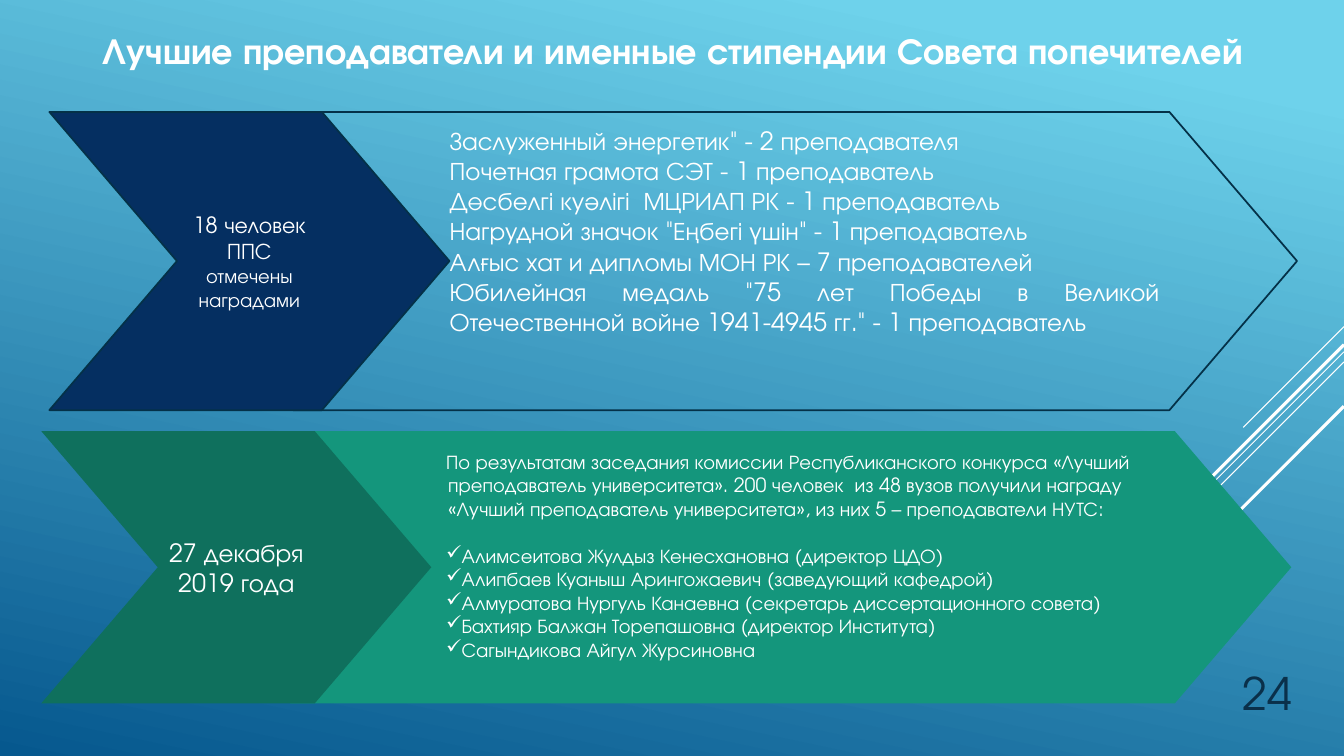
"""Build the slide on the best teachers and the named scholarships."""
from dataclasses import dataclass

from lxml.etree import SubElement
from pptx import Presentation
from pptx.dml.color import RGBColor
from pptx.enum.shapes import MSO_CONNECTOR, MSO_SHAPE
from pptx.enum.text import MSO_ANCHOR, MSO_AUTO_SIZE, PP_ALIGN
from pptx.oxml.ns import qn
from pptx.util import Pt

FONT = "TeX Gyre Adventor"
WHITE = "FFFFFF"
WIDTH, HEIGHT = 960, 540
POINT_DEPTH = 0.428
INSET = 3.6


@dataclass(frozen=True)
class Phrase:
    text: str
    size: float
    color: str = WHITE
    bold: bool = False


@dataclass(frozen=True)
class Line:
    phrases: tuple[Phrase, ...]
    align: PP_ALIGN = PP_ALIGN.CENTER
    margin: float = 0
    indent: float = 0
    bullet: str = ""
    before: float = 0


@dataclass(frozen=True)
class Chevron:
    left: float
    top: float
    width: float
    height: float
    lines: tuple[Line, ...]
    fill: str = ""
    outline: str = ""
    space_below: float = 0


@dataclass(frozen=True)
class Ray:
    top: float
    reach: float
    weight: float


AWARDS = (
    'Заслуженный энергетик" - 2 преподавателя',
    "Почетная грамота СЭТ - 1 преподаватель",
    "Дөсбелгі куәлігі  МЦРИАП РК - 1 преподаватель",
    'Нагрудной значок "Еңбегі үшін" - 1 преподаватель',
    "Алғыс хат и дипломы МОН РК – 7 преподавателей",
    'Юбилейная медаль "75 лет Победы в Великой Отечественной войне '
    '1941-4945 гг." - 1 преподаватель',
)
CONTEST = (
    "По результатам заседания комиссии Республиканского конкурса «Лучший "
    "преподаватель университета». 200 человек  из 48 вузов получили награду "
    "«Лучший преподаватель университета», из них 5 – преподаватели НУТС:"
)
WINNERS = (
    "Алимсеитова Жулдыз Кенесхановна (директор ЦДО)",
    "Алипбаев Куаныш Арингожаевич (заведующий кафедрой)",
    "Алмуратова Нургуль Канаевна (секретарь диссертационного совета)",
    "Бахтияр Балжан Торепашовна (директор Института)",
    "Сагындикова Айгул Журсиновна",
)
AWARD_LINES = tuple(
    Line((Phrase(award, 18),), PP_ALIGN.JUSTIFY, margin=13.5) for award in AWARDS
)
CONTEST_LINES = (
    Line((Phrase(CONTEST, 14),), PP_ALIGN.LEFT, margin=22.5, indent=-1.5),
    *(
        Line((Phrase(winner, 14),), PP_ALIGN.LEFT, 22.5, -1.5, "✓", 0 if place else 16.9)
        for place, winner in enumerate(WINNERS)
    ),
)
AWARDED = Line((Phrase("18 человек ППС ", 16), Phrase("отмечены наградами", 14)))
CONTEST_DATE = Line((Phrase("27 декабря 2019 года", 18),))

CHEVRONS = (
    Chevron(209.5, 80, 717, 213, AWARD_LINES, outline="043148", space_below=43.2),
    Chevron(35.3, 80, 285.8, 213, (AWARDED,), "052F61", "043148"),
    Chevron(207.4, 308, 715, 194.4, CONTEST_LINES, "14967C", space_below=16.9),
    Chevron(29.5, 308, 278.6, 194.4, (CONTEST_DATE,), "0F705D"),
)
RAYS = (
    Ray(233.3, 72, 0.75),
    Ray(251.3, 234.7, 0.75),
    Ray(258.5, 149, 0.75),
    Ray(246.2, 137.5, 2.25),
    Ray(290.2, 100, 2.25),
)


def rgb(color: str) -> RGBColor:
    """Turn a hex string into a colour."""
    return RGBColor.from_string(color)


def place(shape, left: float, top: float, width: float, height: float) -> None:
    """Position a shape, in points."""
    shape.left, shape.top = Pt(left), Pt(top)
    shape.width, shape.height = Pt(width), Pt(height)


def write(frame, lines: tuple[Line, ...], anchor: MSO_ANCHOR) -> None:
    """Fill a text frame with formatted lines."""
    frame.word_wrap = True
    frame.auto_size = MSO_AUTO_SIZE.NONE
    frame.vertical_anchor = anchor
    for number, line in enumerate(lines):
        paragraph = frame.add_paragraph() if number else frame.paragraphs[0]
        paragraph.alignment = line.align
        paragraph.space_before = Pt(line.before)
        properties = paragraph._p.get_or_add_pPr()
        properties.set("marL", str(Pt(line.margin)))
        properties.set("indent", str(Pt(line.indent)))
        if line.bullet:
            SubElement(properties, qn("a:buChar")).set("char", line.bullet)
        for phrase in line.phrases:
            run = paragraph.add_run()
            run.text = phrase.text
            run.font.name = FONT
            run.font.size = Pt(phrase.size)
            run.font.bold = phrase.bold
            run.font.color.rgb = rgb(phrase.color)


def paint_background(slide) -> None:
    """Give the slide its light-to-dark blue gradient."""
    fill = slide.background.fill
    fill.gradient()
    fill.gradient_angle = 258
    for stop, position, color in zip(fill.gradient_stops, (0.1, 1), ("6ED2EB", "06588E")):
        stop.position = position
        stop.color.rgb = rgb(color)


def draw_ray(slide, ray: Ray) -> None:
    """Draw a diagonal line running down from the right edge."""
    connector = slide.shapes.add_connector(
        MSO_CONNECTOR.STRAIGHT,
        Pt(WIDTH), Pt(ray.top), Pt(WIDTH - ray.reach), Pt(ray.top + ray.reach),
    )
    connector.line.color.rgb = rgb(WHITE)
    connector.line.width = Pt(ray.weight)
    SubElement(connector._element.spPr, qn("a:effectLst"))


def draw_chevron(slide, chevron: Chevron) -> None:
    """Draw a chevron with its text."""
    shape = slide.shapes.add_shape(MSO_SHAPE.CHEVRON, 0, 0, 0, 0)
    place(shape, chevron.left, chevron.top, chevron.width, chevron.height)
    shape.adjustments[0] = POINT_DEPTH
    shape.shadow.inherit = False
    if chevron.fill:
        shape.fill.solid()
        shape.fill.fore_color.rgb = rgb(chevron.fill)
    else:
        shape.fill.background()
    if chevron.outline:
        shape.line.color.rgb = rgb(chevron.outline)
        shape.line.width = Pt(1.25)
    else:
        shape.line.fill.background()
    shape.text_frame.margin_bottom = Pt(INSET + chevron.space_below)
    write(shape.text_frame, chevron.lines, MSO_ANCHOR.MIDDLE)


def main() -> None:
    """Build and save the slide."""
    presentation = Presentation()
    presentation.slide_width, presentation.slide_height = Pt(WIDTH), Pt(HEIGHT)
    slide = presentation.slides.add_slide(presentation.slide_layouts[5])
    paint_background(slide)
    for ray in RAYS:
        draw_ray(slide, ray)
    for chevron in CHEVRONS:
        draw_chevron(slide, chevron)
    heading = Phrase(
        "Лучшие преподаватели и именные стипендии Совета попечителей", 26, bold=True
    )
    title = slide.shapes.title
    place(title, 17, 16.5, 927.5, 39)
    write(title.text_frame, (Line((heading,)),), MSO_ANCHOR.TOP)
    page = slide.shapes.add_textbox(Pt(840), Pt(465), Pt(90), Pt(52.5))
    page_line = Line((Phrase("24", 32, "0A304A"),), PP_ALIGN.RIGHT)
    write(page.text_frame, (page_line,), MSO_ANCHOR.BOTTOM)
    presentation.save("out.pptx")


if __name__ == "__main__":
    main()
